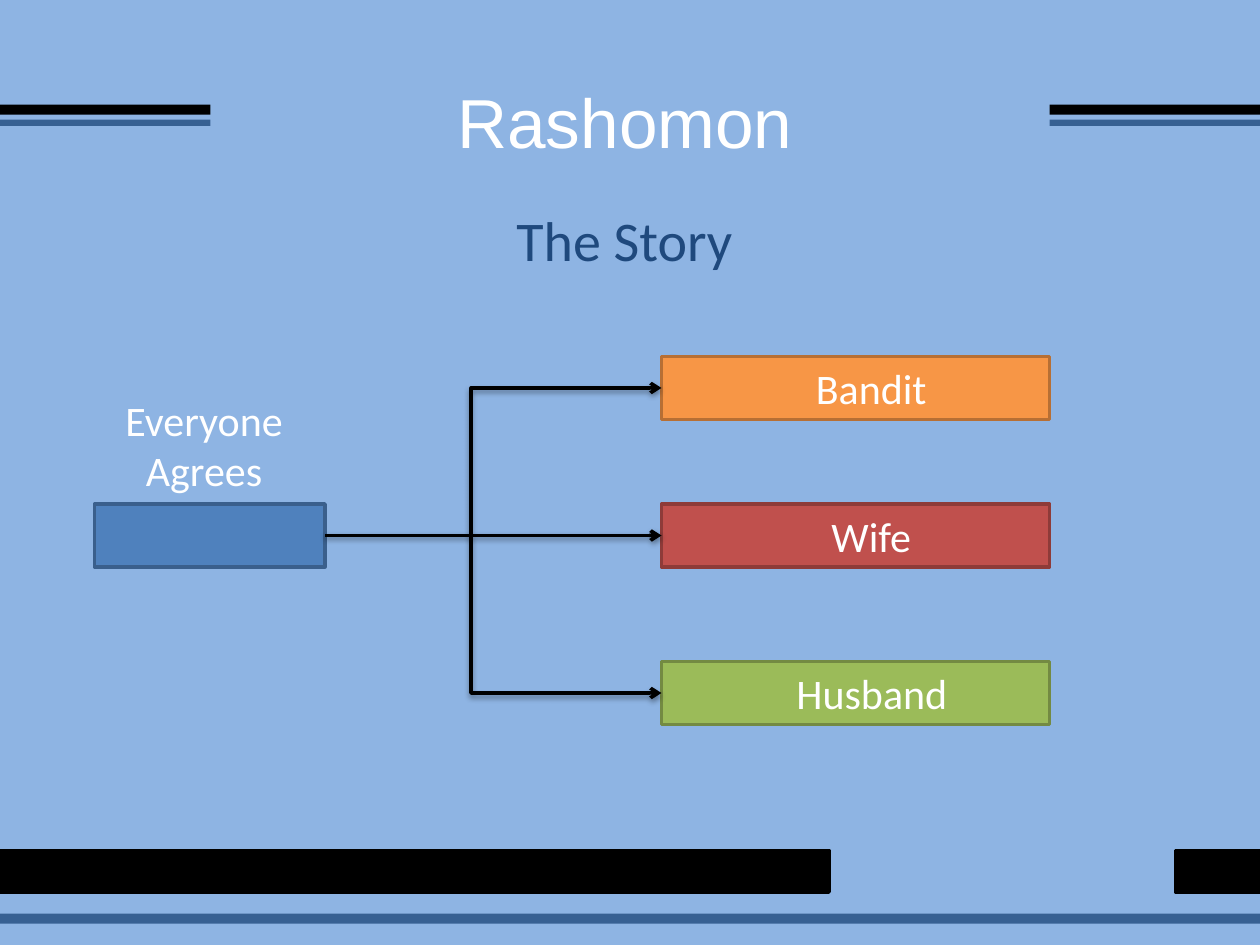
"""Build the Rashomon story slide."""
from lxml import etree
from pptx import Presentation
from pptx.dml.color import RGBColor
from pptx.enum.shapes import MSO_CONNECTOR, MSO_SHAPE
from pptx.enum.text import MSO_ANCHOR, PP_ALIGN
from pptx.oxml import parse_xml
from pptx.oxml.ns import qn
from pptx.util import Inches, Pt

RECT = MSO_SHAPE.RECTANGLE
STRAIGHT, ELBOW = MSO_CONNECTOR.STRAIGHT, MSO_CONNECTOR.ELBOW
TOP, MIDDLE = MSO_ANCHOR.TOP, MSO_ANCHOR.MIDDLE
CENTER = PP_ALIGN.CENTER

SKY = RGBColor(0x8E, 0xB4, 0xE3)
BLACK = RGBColor(0x00, 0x00, 0x00)
WHITE = RGBColor(0xFF, 0xFF, 0xFF)
STEEL = RGBColor(0x37, 0x60, 0x92)
NAVY = RGBColor(0x1F, 0x49, 0x7D)
BLUE = RGBColor(0x4F, 0x81, 0xBD)
BLUE_EDGE = RGBColor(0x3A, 0x5F, 0x8C)
ORANGE = RGBColor(0xF7, 0x96, 0x46)
ORANGE_EDGE = RGBColor(0xB7, 0x6F, 0x34)
RED = RGBColor(0xC0, 0x50, 0x4D)
RED_EDGE = RGBColor(0x8E, 0x3B, 0x39)
GREEN = RGBColor(0x9B, 0xBB, 0x59)
GREEN_EDGE = RGBColor(0x73, 0x8A, 0x42)

TITLE = {"size": Pt(39.6), "name": "Arial"}
SUBTITLE = {"size": Pt(32), "name": "Calibri"}
LABEL = {"size": Pt(24), "name": "Calibri"}
LINE_WIDTH = Pt(2)
SHADOW = (
    '<a:effectLst xmlns:a="http://schemas.openxmlformats.org/drawingml/2006/main">'
    '<a:outerShdw blurRad="40000" dist="20000" dir="5400000" rotWithShape="0">'
    '<a:srgbClr val="000000"><a:alpha val="38000"/></a:srgbClr>'
    '</a:outerShdw></a:effectLst>'
)


class StoryDeck:
    def __init__(self):
        self.prs = Presentation()
        self.prs.slide_width, self.prs.slide_height = Inches(10), Inches(7.5)
        self.s = self.prs.slides.add_slide(self.prs.slide_layouts[6])
        fill = self.s.background.fill
        fill.solid()
        fill.fore_color.rgb = SKY

    def box(self, x, y, w, h, color, edge=None):
        sp = self.s.shapes.add_shape(RECT, Inches(x), Inches(y), Inches(w), Inches(h))
        sp.shadow.inherit = False
        sp.fill.solid()
        sp.fill.fore_color.rgb = color
        if edge is None:
            sp.line.fill.background()
        else:
            sp.line.color.rgb = edge
            sp.line.width = LINE_WIDTH
        return sp

    def text(self, x, y, w, h, lines, style, color=WHITE, align=CENTER, anchor=TOP):
        sp = self.s.shapes.add_textbox(Inches(x), Inches(y), Inches(w), Inches(h))
        tf = sp.text_frame
        tf.word_wrap = True
        tf.vertical_anchor = anchor
        for i, line in enumerate(lines):
            p = tf.add_paragraph() if i else tf.paragraphs[0]
            p.alignment = align
            r = p.add_run()
            r.text = line
            for key, value in style.items():
                setattr(r.font, key, value)
            r.font.color.rgb = color

    def arrow(self, kind, x1, y1, x2, y2, bend=None):
        cx = self.s.shapes.add_connector(kind, Inches(x1), Inches(y1), Inches(x2), Inches(y2))
        cx.line.color.rgb = BLACK
        cx.line.width = LINE_WIDTH
        sp_pr = cx._element.spPr
        etree.SubElement(sp_pr.find(qn("a:ln")), qn("a:tailEnd"), type="arrow")
        sp_pr.append(parse_xml(SHADOW))
        if bend is not None:
            guides = sp_pr.find(qn("a:prstGeom")).find(qn("a:avLst"))
            etree.SubElement(guides, qn("a:gd"), name="adj1", fmla=f"val {round(bend * 100000)}")
        return cx


def main():
    deck = StoryDeck()
    for x, w in ((0, 6.58), (9.33, 0.67)):
        deck.box(x, 6.75, w, 0.33, BLACK, BLACK)
    for x in (0, 8.33):
        deck.box(x, 0.83, 1.67, 0.08, BLACK)
        deck.box(x, 0.95, 1.67, 0.05, STEEL)
    deck.box(0, 7.25, 10, 0.08, STEEL)

    deck.text(1.92, 0.58, 6.08, 0.75, ["Rashomon"], TITLE, anchor=MIDDLE)
    deck.text(4, 1.58, 2, 0.64, ["The Story"], SUBTITLE, NAVY, align=None)

    deck.box(0.75, 4, 1.83, 0.5, BLUE, BLUE_EDGE)
    bandit, wife, husband = [
        deck.box(5.25, y, 3.08, 0.5, color, edge)
        for y, color, edge in (
            (2.83, ORANGE, ORANGE_EDGE), (4, RED, RED_EDGE), (5.25, GREEN, GREEN_EDGE))
    ]
    deck.arrow(ELBOW, 2.58, 4.25, 5.25, 5.5, 0.434)
    deck.arrow(STRAIGHT, 3.75, 4.25, 5.25, 4.25).end_connect(wife, 1)
    deck.arrow(ELBOW, 3.75, 4.25, 5.25, 3.08, -0.007)

    deck.text(0.58, 3.08, 2.08, 0.91, ["Everyone", "Agrees"], LABEL)
    for x, w, sp, name in ((6.25, 1.33, bandit, "Bandit"), (6.25, 1.33, wife, "Wife"),
                           (6.17, 1.5, husband, "Husband")):
        deck.text(x, sp.top.inches, w, 0.5, [name], LABEL)
    deck.prs.save("out.pptx")


if __name__ == "__main__":
    main()
